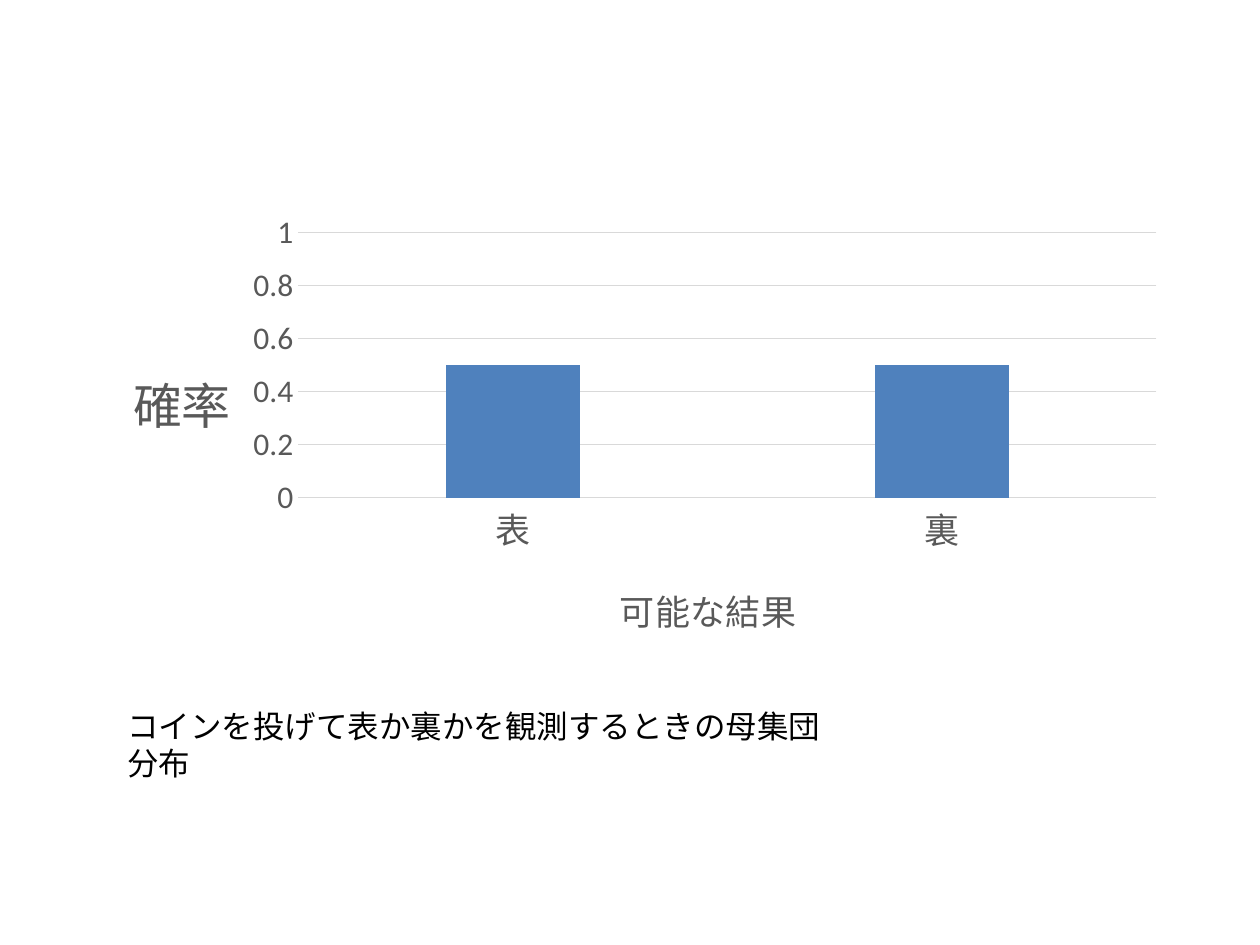
from lxml.etree import SubElement
from pptx import Presentation
from pptx.chart.data import CategoryChartData
from pptx.dml.color import RGBColor
from pptx.enum.chart import XL_CHART_TYPE, XL_TICK_MARK
from pptx.oxml.ns import qn
from pptx.util import Inches, Pt


def write_text(text_frame, text, size, color, font="Calibri"):
    paragraph = text_frame.paragraphs[0]
    run = paragraph.add_run()
    run.text = text
    run.font.size = Pt(size)
    run.font.name = font
    run.font.bold = False
    run.font.color.rgb = RGBColor.from_string(color)


def set_layout(parent, index, **values):
    for old_layout in parent.findall(qn("c:layout")):
        parent.remove(old_layout)
    layout = SubElement(parent, qn("c:layout"))
    parent.insert(index, layout)
    manual = SubElement(layout, qn("c:manualLayout"))
    for name, value in values.items():
        SubElement(manual, qn(f"c:{name}")).set("val", str(value))


presentation = Presentation()
presentation.slide_width = Inches(10)
presentation.slide_height = Inches(7.5)
slide = presentation.slides.add_slide(presentation.slide_layouts[6])

data = CategoryChartData()
data.categories = ["表", "裏"]
data.add_series("Series 1", [0.5, 0.5])
chart = slide.shapes.add_chart(
    XL_CHART_TYPE.COLUMN_CLUSTERED,
    Inches(0.73), Inches(1.63), Inches(8.62), Inches(3.57), data,
).chart
chart.has_title = False
chart.has_legend = False
chart.font.size = Pt(10)
chart.font.name = "Calibri"

plot = chart.plots[0]
plot.vary_by_categories = False
plot.gap_width = 219
plot.overlap = -27
bars = plot.series[0]
bars.format.fill.solid()
bars.format.fill.fore_color.rgb = RGBColor.from_string("4F81BD")

outcome_axis, probability_axis = chart.category_axis, chart.value_axis
probability_axis.minimum_scale = 0
probability_axis.maximum_scale = 1
probability_axis.major_unit = 0.2
probability_axis.has_major_gridlines = True
probability_axis.tick_labels.number_format = "General"
probability_axis.tick_labels.number_format_is_linked = False
probability_axis.format.line.fill.background()
for line in (outcome_axis.format.line, probability_axis.major_gridlines.format.line):
    line.color.rgb = RGBColor.from_string("D9D9D9")
    line.width = Pt(0.75)

for axis, title, title_size, label_size, left, top in (
    (outcome_axis, "可能な結果", 20, 20, 0.48, 0.82),
    (probability_axis, "確率", 28, 18, 0.03, 0.33),
):
    axis.major_tick_mark = XL_TICK_MARK.NONE
    axis.minor_tick_mark = XL_TICK_MARK.NONE
    label_font = axis.tick_labels.font
    label_font.size = Pt(label_size)
    label_font.name = "Calibri"
    label_font.color.rgb = RGBColor.from_string("595959")
    title_frame = axis.axis_title.text_frame
    write_text(title_frame, title, size=title_size, color="595959")
    title_element = axis.axis_title._element
    body = title_element.find(".//" + qn("a:bodyPr"))
    body.set("rot", "0")
    body.set("vert", "horz")
    set_layout(title_element, 1, xMode="edge", yMode="edge", x=left, y=top)

plot_area = chart._chartSpace.find(".//" + qn("c:plotArea"))
set_layout(plot_area, 0, layoutTarget="inner", xMode="edge", yMode="edge",
           x=0.19, y=0.06, w=0.79, h=0.59)

caption = slide.shapes.add_textbox(Inches(0.91), Inches(5.56), Inches(5.88), Inches(0.4))
caption.text_frame.word_wrap = True
write_text(caption.text_frame, "コインを投げて表か裏かを観測するときの母集団分布",
           size=18, color="000000")

presentation.save("out.pptx")
